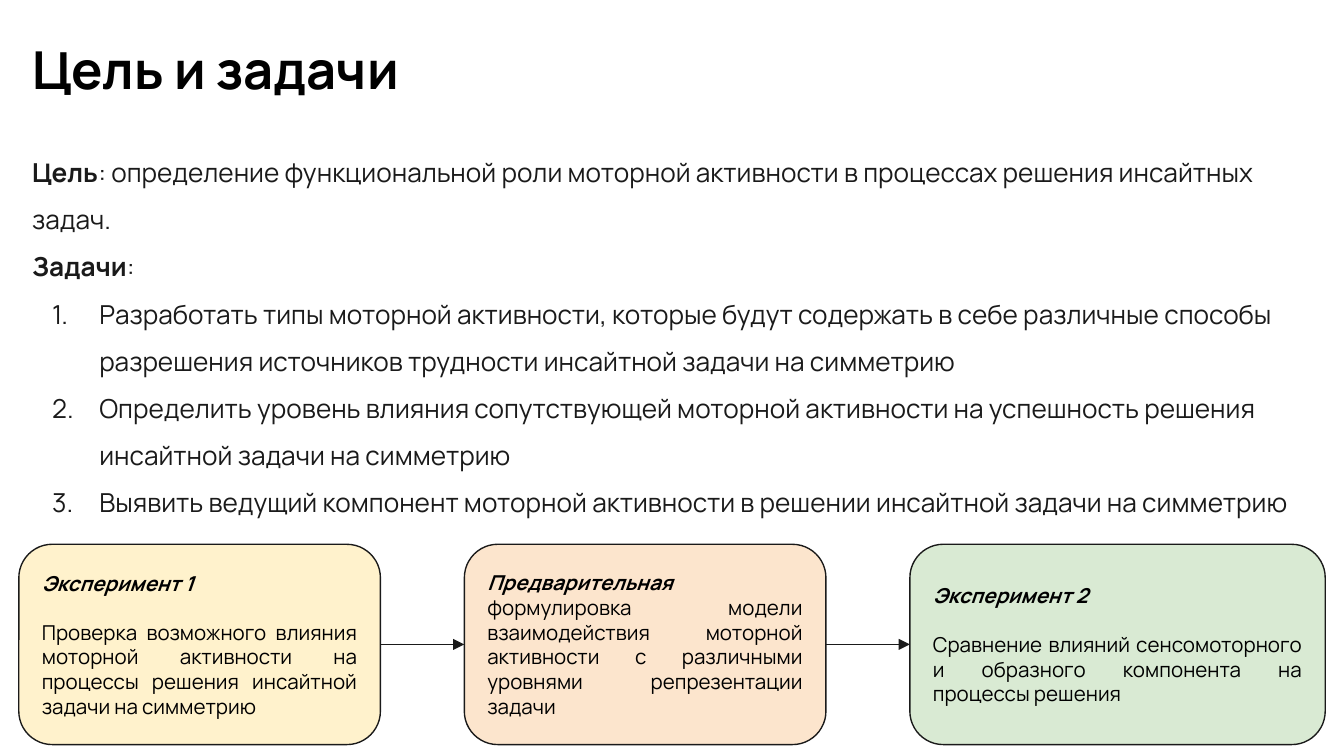
from lxml import etree
from pptx import Presentation
from pptx.dml.color import RGBColor
from pptx.enum.shapes import MSO_CONNECTOR, MSO_SHAPE
from pptx.enum.text import MSO_ANCHOR, MSO_AUTO_SIZE, PP_ALIGN
from pptx.oxml.ns import qn
from pptx.util import Inches, Pt

ROUND, LINE = MSO_SHAPE.ROUNDED_RECTANGLE, MSO_CONNECTOR.STRAIGHT
TOP, MID = MSO_ANCHOR.TOP, MSO_ANCHOR.MIDDLE
LEFT, EVEN = PP_ALIGN.LEFT, PP_ALIGN.JUSTIFY
FIXED = MSO_AUTO_SIZE.NONE

# Content
TITLE = "Цель и задачи"
INTRO = [
    ("Цель", ": определение функциональной роли моторной активности "
             "в процессах решения инсайтных задач."),
    ("Задачи", ":"),
]
TASKS = [
    "Разработать типы моторной активности, которые будут содержать в себе "
    "различные способы разрешения источников трудности инсайтной задачи "
    "на симметрию",
    "Определить уровень влияния сопутствующей моторной активности на "
    "успешность решения инсайтной задачи на симметрию",
    "Выявить ведущий компонент моторной активности в решении инсайтной "
    "задачи на симметрию",
]
# Each step: fill, width, paragraphs of (bold, plain) text
STEPS = [
    ("yellow", 2.69, [
        ("Эксперимент 1", ""),
        ("", "Проверка возможного влияния моторной активности на процессы "
             "решения инсайтной задачи на симметрию")]),
    ("peach", 2.69, [
        ("Предварительная ", "формулировка модели взаимодействия моторной "
                             "активности с различными уровнями репрезентации "
                             "задачи")]),
    ("green", 3.09, [
        ("Эксперимент 2", ""),
        ("", "Сравнение влияний сенсомоторного и образного компонента на "
             "процессы решения")]),
]

# Style
COLORS = {"black": "000000", "ink": "1A1A1A", "yellow": "FFF2CC",
          "peach": "FCE5CD", "green": "D9EAD3"}
HEAD = {"name": "Manrope", "size": Pt(28), "bold": True}
BODY = {"name": "Manrope", "size": Pt(14), "bold": False}
NOTE = {"name": "Manrope", "size": Pt(11), "bold": False}
EDGE, SPAN, STEP_TOP, STEP_HIGH = 0.14, 9.72, 4.05, 1.49


def color(name):
    return RGBColor.from_string(COLORS[name])


def add_run(par, text, look, ink, **extra):
    run = par.add_run()
    run.text = text
    for key, value in {**look, **extra}.items():
        setattr(run.font, key, value)
    run.font.color.rgb = color(ink)


def set_frame(frame, anchor):
    for side in ("left", "top", "right", "bottom"):
        setattr(frame, f"margin_{side}", Inches(0.1))
    frame.word_wrap = True
    frame.auto_size = FIXED
    frame.vertical_anchor = anchor


def next_par(frame, first, align):
    par = frame.paragraphs[0] if first else frame.add_paragraph()
    par.alignment = align
    return par


def add_number(par):
    props = par._p.get_or_add_pPr()
    props.set("marL", str(Inches(0.5)))
    props.set("indent", str(Inches(-0.35)))
    tint = etree.SubElement(props, qn("a:buClr"))
    etree.SubElement(tint, qn("a:srgbClr"), val=COLORS["ink"])
    etree.SubElement(props, qn("a:buFont"), typeface="Manrope")
    etree.SubElement(props, qn("a:buAutoNum"), type="arabicPeriod")


def add_step(slide, left, fill, width, pars):
    box = slide.shapes.add_shape(ROUND, Inches(left), Inches(STEP_TOP),
                                 Inches(width), Inches(STEP_HIGH))
    box.shadow.inherit = False
    box.fill.solid()
    box.fill.fore_color.rgb = color(fill)
    box.line.color.rgb = color("ink")
    box.line.width = Pt(0.75)
    set_frame(box.text_frame, MID)
    for i, (bold, plain) in enumerate(pars):
        par = next_par(box.text_frame, i == 0, EVEN)
        par.space_before = Pt(13 if i else 0)
        if bold:
            add_run(par, bold, NOTE, "black", bold=True, italic=True)
        if plain:
            add_run(par, plain, NOTE, "black")
    return box


def add_arrow(slide, start, end):
    arrow = slide.shapes.add_connector(LINE, 0, 0, 0, 0)
    arrow.begin_connect(start, 3)
    arrow.end_connect(end, 1)
    arrow.line.color.rgb = color("ink")
    arrow.line.width = Pt(0.75)
    etree.SubElement(arrow.line._get_or_add_ln(), qn("a:tailEnd"),
                     type="triangle")
    etree.SubElement(arrow._element.spPr, qn("a:effectLst"))


def main():
    deck = Presentation()
    deck.slide_width = Inches(10)
    deck.slide_height = deck.slide_width * 9 // 16
    slide = deck.slides.add_slide(deck.slide_layouts[5])

    # Title
    title = slide.shapes.title
    title.left, title.top = Inches(EDGE), Inches(0.18)
    title.width, title.height = Inches(8.41), Inches(0.59)
    set_frame(title.text_frame, TOP)
    add_run(next_par(title.text_frame, True, LEFT), TITLE, HEAD, "black")

    # Goal and numbered tasks
    frame = slide.shapes.add_textbox(Inches(EDGE), Inches(0.95), Inches(SPAN),
                                     Inches(2.91)).text_frame
    set_frame(frame, TOP)
    for i, (bold, plain) in enumerate(INTRO):
        par = next_par(frame, i == 0, LEFT)
        par.line_spacing = 1.5
        add_run(par, bold, BODY, "ink", bold=True)
        add_run(par, plain, BODY, "ink")
    for task in TASKS:
        par = next_par(frame, False, LEFT)
        par.line_spacing = 1.5
        add_number(par)
        add_run(par, task, BODY, "ink")

    # Row of steps with equal gaps, joined by arrows
    gap = (SPAN - sum(step[1] for step in STEPS)) / (len(STEPS) - 1)
    boxes, left = [], EDGE
    for fill, width, pars in STEPS:
        boxes.append(add_step(slide, left, fill, width, pars))
        left += width + gap
    for start, end in zip(boxes, boxes[1:]):
        add_arrow(slide, start, end)

    deck.save("out.pptx")


if __name__ == "__main__":
    main()
